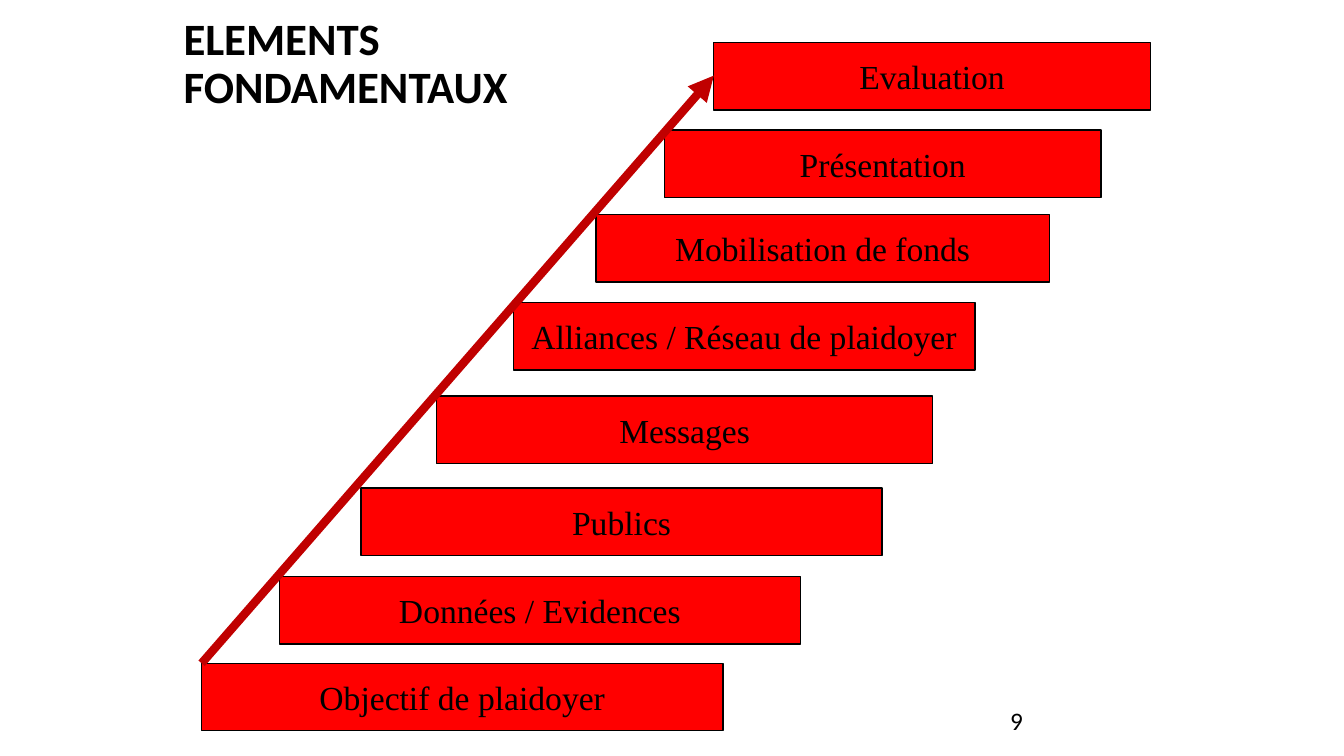
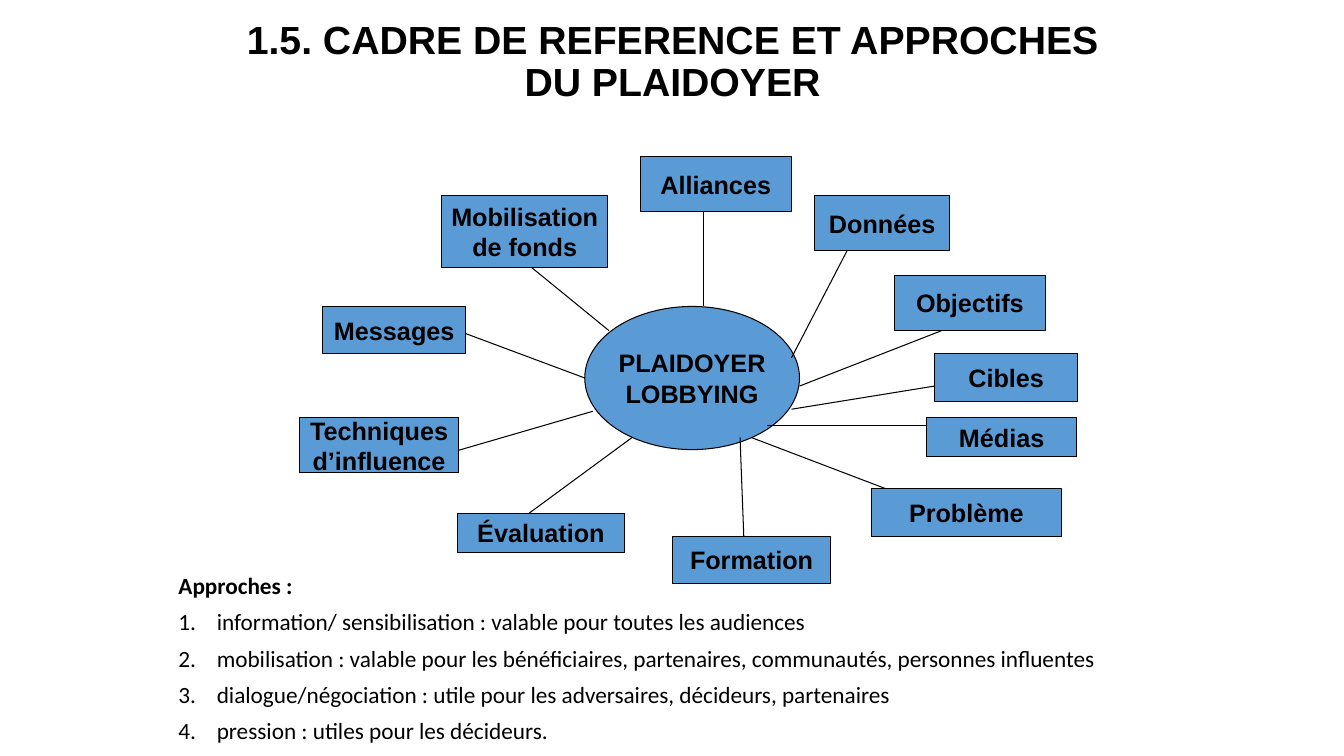
import pptx
import pptx.dml.color
import pptx.enum.shapes
import pptx.enum.text
import pptx.oxml.ns
import pptx.util
from lxml import etree

PX = 9144  # one hundredth of an inch

BLACK = pptx.dml.color.RGBColor(0x00, 0x00, 0x00)
RED = pptx.dml.color.RGBColor(0xFF, 0x00, 0x00)
DARK_RED = pptx.dml.color.RGBColor(0xC0, 0x00, 0x00)
BLUE = pptx.dml.color.RGBColor(0x5B, 0x9B, 0xD5)

ALIGN = pptx.enum.text.PP_ALIGN
ANCHOR = pptx.enum.text.MSO_ANCHOR
SHAPE = pptx.enum.shapes.MSO_SHAPE
TITLE_ONLY, TITLE_AND_CONTENT = 5, 1


def font_format(name, size, bold=False):
    return {"name": name, "size": pptx.util.Pt(size), "bold": bold}


STEP_FONT = font_format("Times New Roman", 24)
NODE_FONT = font_format("Arial", 18, True)
LIST_FONT = font_format("Calibri", 16.6)
LIST_HEADING_FONT = font_format("Calibri", 16.6, True)
NUMBER_FONT = font_format("Calibri", 18)

STEP_HEIGHT = 67
# label, left, top, width
STEPS = [
    ("Objectif de plaidoyer", 200, 658, 517),
    ("Données / Evidences", 277, 572, 517),
    ("Publics", 358, 484, 517),
    ("Messages", 433, 393, 492),
    ("Alliances / Réseau de plaidoyer", 509, 300, 458),
    ("Mobilisation de fonds", 591, 213, 450),
    ("Présentation", 659, 129, 433),
    ("Evaluation", 708, 42, 433),
]

# label, box, line start at the hub, line end at the box
NODES = [
    ("Alliances", (635, 155, 150, 55), (698, 304), (698, 210)),
    ("Données", (808, 194, 134, 55), (785, 355), (840, 249)),
    ("Objectifs", (887, 273, 150, 55), (793, 383), (934, 328)),
    ("Cibles", (927, 351, 142, 47), (785, 406), (927, 383)),
    ("Médias", (919, 414, 149, 39), (761, 422), (919, 422)),
    ("Problème", (864, 485, 189, 47), (745, 434), (879, 485)),
    ("Formation", (667, 532, 157, 47), (734, 434), (738, 540)),
    ("Évaluation", (454, 509, 165, 39), (627, 434), (525, 509)),
    ("Techniques\nd’influence", (297, 414, 158, 55), (588, 408), (454, 447)),
    ("Messages", (320, 304, 142, 47), (580, 375), (454, 328)),
    ("Mobilisation\nde fonds", (438, 194, 165, 71), (604, 328), (517, 257)),
]

APPROACHES = [
    "information/ sensibilisation : valable pour toutes les audiences",
    "mobilisation : valable pour les bénéficiaires, partenaires, communautés, personnes influentes",
    "dialogue/négociation : utile pour les adversaires, décideurs, partenaires",
    "pression : utiles pour les décideurs.",
]


def emu(lengths):
    return [length * PX for length in lengths]


def set_attributes(target, values):
    for name, value in values.items():
        setattr(target, name, value)


def place(shape, box):
    set_attributes(shape, dict(zip(("left", "top", "width", "height"), emu(box))))


def format_paragraph(paragraph, font, **layout):
    set_attributes(paragraph, layout)
    set_attributes(paragraph.font, font)
    paragraph.font.color.rgb = BLACK


def set_text(shape, text, font, anchor=ANCHOR.MIDDLE, wrap=True, **layout):
    """Fill a shape with text, one paragraph a line."""
    frame = shape.text_frame
    frame.text = text
    set_attributes(frame, {
        "word_wrap": wrap,
        "auto_size": pptx.enum.text.MSO_AUTO_SIZE.NONE,
        "vertical_anchor": anchor,
    })
    for paragraph in frame.paragraphs:
        format_paragraph(paragraph, font, **layout)


def add_titled_slide(presentation, layout_index, title, box, font, alignment):
    slide = presentation.slides.add_slide(presentation.slide_layouts[layout_index])
    place(slide.shapes.title, box)
    set_text(slide.shapes.title, title, font, alignment=alignment, line_spacing=0.9)
    return slide


def add_box(slide, label, box, fill, font, line_width, preset=SHAPE.RECTANGLE):
    shape = slide.shapes.add_shape(preset, *emu(box))
    shape.shadow.inherit = False
    shape.fill.solid()
    shape.fill.fore_color.rgb = fill
    shape.line.color.rgb = BLACK
    shape.line.width = pptx.util.Pt(line_width)
    set_text(shape, label, font, wrap=False, alignment=ALIGN.CENTER)


def add_line(slide, start, end, color, width, arrow=False):
    connector = slide.shapes.add_connector(
        pptx.enum.shapes.MSO_CONNECTOR.STRAIGHT, *emu(start + end))
    connector.line.color.rgb = color
    connector.line.width = pptx.util.Pt(width)
    if arrow:
        etree.SubElement(connector.line._get_or_add_ln(),
                         pptx.oxml.ns.qn("a:tailEnd"), type="triangle")
    etree.SubElement(connector._element.spPr, pptx.oxml.ns.qn("a:effectLst"))


def set_indent(paragraph, indent):
    properties = paragraph._p.get_or_add_pPr()
    properties.set("marL", str(indent * PX))
    properties.set("indent", str(-indent * PX))
    return properties


def add_numbered_list(slide, heading, items, box):
    """Put a bold heading and numbered items in the body placeholder."""
    body = slide.placeholders[1]
    place(body, box)
    set_text(body, "\n".join([heading, *items]), LIST_FONT, ANCHOR.TOP,
             alignment=ALIGN.LEFT, line_spacing=0.8, space_before=pptx.util.Pt(10))
    first, *numbered = body.text_frame.paragraphs
    format_paragraph(first, LIST_HEADING_FONT)
    etree.SubElement(set_indent(first, 25), pptx.oxml.ns.qn("a:buNone"))
    for paragraph in numbered:
        etree.SubElement(set_indent(paragraph, 38),
                         pptx.oxml.ns.qn("a:buAutoNum"), type="arabicPeriod")


def add_page_number(slide, number):
    text_box = slide.shapes.add_textbox(*emu((992, 695, 250, 40)))
    set_text(text_box, number, NUMBER_FONT)


def build_steps_slide(presentation):
    slide = add_titled_slide(
        presentation, TITLE_ONLY, "ELEMENTS FONDAMENTAUX", (172, 27, 523, 75),
        font_format("Calibri", 32, True), ALIGN.LEFT)
    add_page_number(slide, "9")
    for label, left, top, width in STEPS:
        add_box(slide, label, (left, top, width, STEP_HEIGHT), RED, STEP_FONT, 1)
    add_line(slide, (200, 658), (708, 75), DARK_RED, 6, arrow=True)


def build_framework_slide(presentation):
    slide = add_titled_slide(
        presentation, TITLE_AND_CONTENT,
        "1.5. CADRE DE REFERENCE ET APPROCHES DU PLAIDOYER", (217, 18, 900, 89),
        font_format("Arial", 28, True), ALIGN.CENTER)
    add_box(slide, "PLAIDOYER\nLOBBYING", (580, 304, 213, 142), BLUE, NODE_FONT,
            0.75, SHAPE.OVAL)
    for label, box, start, end in NODES:
        add_line(slide, start, end, BLACK, 0.75)
        add_box(slide, label, box, BLUE, NODE_FONT, 0.75)
    add_numbered_list(slide, "Approches :", APPROACHES, (167, 567, 984, 186))


def main():
    presentation = pptx.Presentation()
    presentation.slide_width, presentation.slide_height = emu((1333, 750))
    build_steps_slide(presentation)
    build_framework_slide(presentation)
    presentation.save("out.pptx")


if __name__ == "__main__":
    main()
